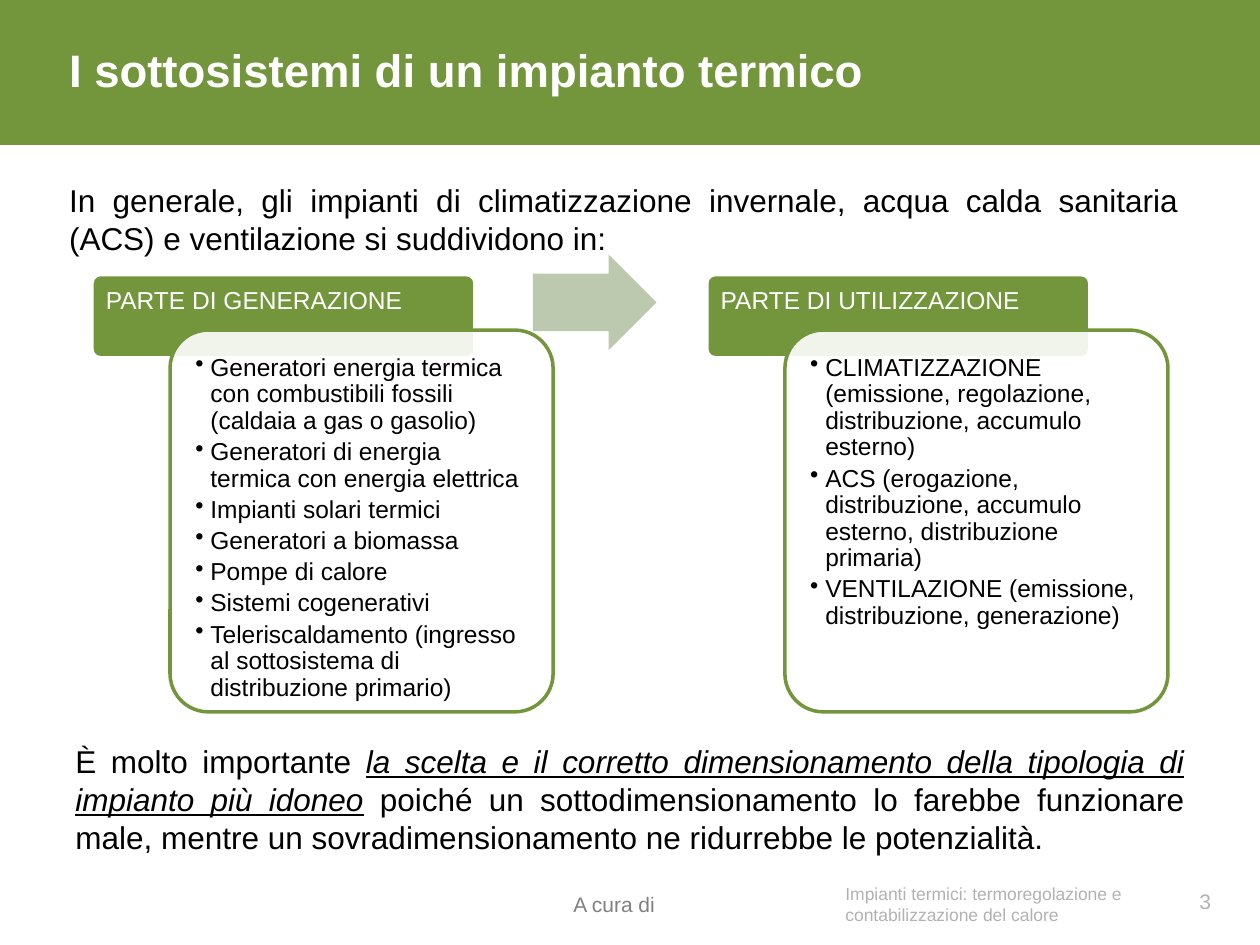
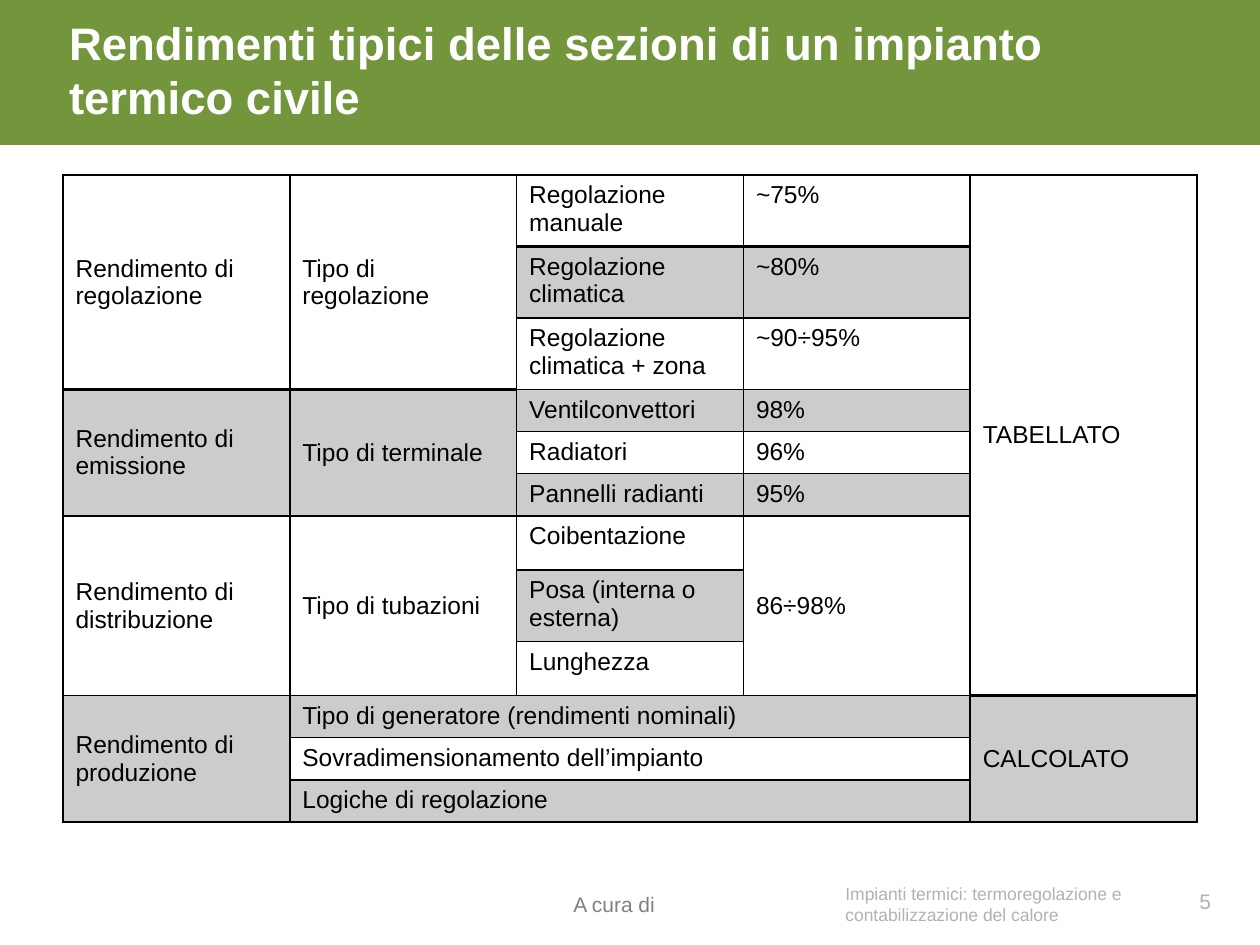
import lxml.etree
import pptx
import pptx.dml.color
import pptx.enum.shapes
import pptx.enum.text
import pptx.oxml.ns
import pptx.util

Inches = pptx.util.Inches
Pt = pptx.util.Pt
RGBColor = pptx.dml.color.RGBColor
Shape = pptx.enum.shapes.MSO_SHAPE
Anchor = pptx.enum.text.MSO_ANCHOR
Align = pptx.enum.text.PP_ALIGN
qn = pptx.oxml.ns.qn

GREEN = RGBColor(0x73, 0x96, 0x3D)
SAGE = RGBColor(0xBC, 0xC9, 0xAF)
WHITE = RGBColor(0xFF, 0xFF, 0xFF)
BLACK = RGBColor(0, 0, 0)
GREY = RGBColor(0x80, 0x80, 0x80)
PALE_GREY = RGBColor(0xB2, 0xB2, 0xB2)
FONT = "Arial"
TEXT_INSETS = (0.1, 0.05, 0.1, 0.05)
FOOTER_INSETS = (0, 0.05, 0.1, 0)

SUBSYSTEMS = [
    ("PARTE DI GENERAZIONE", [
        "Generatori energia termica con combustibili fossili (caldaia a gas o gasolio)",
        "Generatori di energia termica con energia elettrica",
        "Impianti solari termici",
        "Generatori a biomassa",
        "Pompe di calore",
        "Sistemi cogenerativi",
        "Teleriscaldamento (ingresso al sottosistema di distribuzione primario)",
    ]),
    ("PARTE DI UTILIZZAZIONE", [
        "CLIMATIZZAZIONE (emissione, regolazione, distribuzione, accumulo esterno)",
        "ACS (erogazione, distribuzione, accumulo esterno, distribuzione primaria)",
        "VENTILAZIONE (emissione, distribuzione, generazione)",
    ]),
]

ROW_HEIGHTS = [0.54] * 3 + [0.33] * 3 + [0.43, 0.54, 0.43] + [0.32] * 3
EFFICIENCIES = [
    ["Rendimento di regolazione", "Tipo di regolazione", "Regolazione manuale", "~75%", "TABELLATO"],
    ["", "", "Regolazione climatica", "~80%", ""],
    ["", "", "Regolazione climatica + zona", "~90÷95%", ""],
    ["Rendimento di emissione", "Tipo di terminale", "Ventilconvettori", "98%", ""],
    ["", "", "Radiatori", "96%", ""],
    ["", "", "Pannelli radianti", "95%", ""],
    ["Rendimento di distribuzione", "Tipo di tubazioni", "Coibentazione", "86÷98%", ""],
    ["", "", "Posa (interna o esterna)", "", ""],
    ["", "", "Lunghezza", "", ""],
    ["Rendimento di produzione", "Tipo di generatore (rendimenti nominali)", "", "", "CALCOLATO"],
    ["", "Sovradimensionamento dell’impianto", "", "", ""],
    ["", "Logiche di regolazione", "", "", ""],
]
TALL_CELLS = {(row, column): 3 for row in (0, 3, 6) for column in (0, 1)}
TALL_CELLS.update({(9, 0): 3, (6, 3): 3, (0, 4): 9, (9, 4): 3})
WIDE_CELLS = [(row, 1) for row in (9, 10, 11)]
SHADED_CELLS = {(1, 2), (1, 3), (3, 0), (3, 1), (3, 2), (3, 3), (5, 2), (5, 3),
                (7, 2), (9, 0), (9, 1), (9, 4), (11, 1)}


class Deck:
    def __init__(self):
        self.deck = pptx.Presentation()
        self.deck.slide_width = Inches(10)
        self.deck.slide_height = Inches(7.5)
        self.page = None

    def add_page(self, title, title_lines, number):
        self.page = self.deck.slides.add_slide(self.deck.slide_layouts[6])
        self.shape(Shape.RECTANGLE, (0, 0, 10, 1.15), GREEN)
        self.text((4.55, 6.95, 2.2, 0.4), ["A cura di"], 12, GREY, FOOTER_INSETS, Anchor.MIDDLE)
        self.text((6.71, 6.95, 2.43, 0.4),
                  ["Impianti termici: termoregolazione e contabilizzazione del calore"],
                  10, PALE_GREY, FOOTER_INSETS, Anchor.MIDDLE)
        height = 0.44 * title_lines
        heading = self.text((0.45, 0.55 - height / 2, 9, height), [title], 26, WHITE,
                            (0.1, 0, 0.1, 0), Anchor.MIDDLE)
        heading[0].runs[0].font.bold = True
        self.text((9.14, 6.95, 0.57, 0.4), [str(number)], 12, PALE_GREY,
                  anchor=Anchor.MIDDLE, align=Align.RIGHT)

    def shape(self, kind, place, fill, line=None, adjustments=(), opacity=None):
        box = self.page.shapes.add_shape(kind, *map(Inches, place))
        box.shadow.inherit = False
        for index, value in enumerate(adjustments):
            box.adjustments[index] = value
        box.fill.solid()
        box.fill.fore_color.rgb = fill
        if opacity:
            self.set_opacity(box._element.spPr, opacity)
        if line is None:
            box.line.fill.background()
        else:
            box.line.color.rgb = line
            box.line.width = Pt(2)

    def text(self, place, lines, size, color, insets=TEXT_INSETS, anchor=Anchor.TOP,
             align=Align.LEFT):
        frame = self.page.shapes.add_textbox(*map(Inches, place)).text_frame
        frame.word_wrap = True
        frame.vertical_anchor = anchor
        (frame.margin_left, frame.margin_top,
         frame.margin_right, frame.margin_bottom) = map(Inches, insets)
        frame.text = "\n".join(lines)
        for para in frame.paragraphs:
            para.alignment = align
            self.format_runs(para, size, color)
        return frame.paragraphs

    def bullets(self, place, lines):
        for para in self.text(place, lines, 14, BLACK, (0.11,) * 4):
            properties = para._p.get_or_add_pPr()
            properties.set("marL", str(Inches(0.12)))
            properties.set("indent", str(-Inches(0.12)))
            lxml.etree.SubElement(properties, qn("a:buChar"), char="•")
            para.line_spacing = 0.9
            para.space_after = Pt(2.7)

    def subsystem(self, left, name, items):
        self.shape(Shape.ROUNDED_RECTANGLE, (left, 2.18, 3.04, 0.66), GREEN, WHITE, [0.1])
        header = self.text((left, 2.18, 3.04, 0.44), [name], 14, WHITE, (0.11, 0.11, 0.11, 0.06))
        header[0].line_spacing = 0.9
        self.shape(Shape.ROUNDED_RECTANGLE, (left + 0.62, 2.62, 3.04, 3.03), WHITE, GREEN,
                   [0.1], 90)
        self.bullets((left + 0.71, 2.71, 2.86, 2.85), items)

    def table(self, left, top, column_width, row_heights, rows):
        columns = len(rows[0])
        frame = self.page.shapes.add_table(len(rows), columns, Inches(left), Inches(top),
                                           Inches(column_width * columns),
                                           Inches(sum(row_heights)))
        grid = frame.table
        grid.first_row = grid.horz_banding = False
        for column in grid.columns:
            column.width = Inches(column_width)
        for row, height in zip(grid.rows, row_heights):
            row.height = Inches(height)
        for (row, column), span in TALL_CELLS.items():
            grid.cell(row, column).merge(grid.cell(row + span - 1, column))
        for row, column in WIDE_CELLS:
            grid.cell(row, column).merge(grid.cell(row, column + 2))
        for row, texts in enumerate(rows):
            for column, words in enumerate(texts):
                cell = grid.cell(row, column)
                self.set_borders(cell, 2 if row == 0 else 1)
                self.fill_cell(cell, (row, column) in SHADED_CELLS)
                if (row, column) in TALL_CELLS:
                    cell.vertical_anchor = Anchor.MIDDLE
                if words:
                    cell.text_frame.text = words
                    self.format_runs(cell.text_frame.paragraphs[0], 14, BLACK)

    def fill_cell(self, cell, shaded):
        if shaded:
            cell.fill.solid()
            cell.fill.fore_color.rgb = BLACK
            self.set_opacity(cell._tc.tcPr, 20)
        else:
            cell.fill.background()

    @staticmethod
    def set_borders(cell, bottom_width):
        properties = cell._tc.get_or_add_tcPr()
        for side, width in (("L", 1), ("R", 1), ("T", 1), ("B", bottom_width)):
            line = lxml.etree.SubElement(properties, qn("a:ln" + side), w=str(Pt(width)))
            fill = lxml.etree.SubElement(line, qn("a:solidFill"))
            lxml.etree.SubElement(fill, qn("a:srgbClr"), val=str(BLACK))

    @staticmethod
    def set_opacity(properties, percent):
        color = properties.find(qn("a:solidFill"))[0]
        lxml.etree.SubElement(color, qn("a:alpha"), val=str(percent * 1000))

    @staticmethod
    def format_runs(para, size, color):
        for span in para.runs:
            span.font.name = FONT
            span.font.size = Pt(size)
            span.font.color.rgb = color


def build_subsystems(deck):
    deck.add_page("I sottosistemi di un impianto termico", 1, 3)
    deck.text((0.45, 1.39, 9, 0.71),
              ["In generale, gli impianti di climatizzazione invernale, acqua calda sanitaria "
               "(ACS) e ventilazione si suddividono in:"], 18, BLACK, align=Align.JUSTIFY)
    for index, (name, items) in enumerate(SUBSYSTEMS):
        deck.subsystem(0.73 + 4.88 * index, name, items)
    deck.shape(Shape.RIGHT_ARROW, (4.23, 2.02, 0.98, 0.76), SAGE, adjustments=[0.6, 0.5])
    closing = deck.text((0.5, 5.84, 9, 1.01), ["È molto importante "], 18, BLACK,
                        align=Align.JUSTIFY)[0]
    emphasis = closing.add_run()
    emphasis.text = "la scelta e il corretto dimensionamento della tipologia di impianto più idoneo"
    emphasis.font.italic = emphasis.font.underline = True
    closing.add_run().text = (" poiché un sottodimensionamento lo farebbe funzionare male, "
                              "mentre un sovradimensionamento ne ridurrebbe le potenzialità.")
    deck.format_runs(closing, 18, BLACK)


def build_efficiencies(deck):
    deck.add_page("Rendimenti tipici delle sezioni di un impianto termico civile", 2, 5)
    deck.table(0.5, 1.39, 1.8, ROW_HEIGHTS, EFFICIENCIES)


def main():
    deck = Deck()
    build_subsystems(deck)
    build_efficiencies(deck)
    deck.deck.save("out.pptx")


if __name__ == "__main__":
    main()
